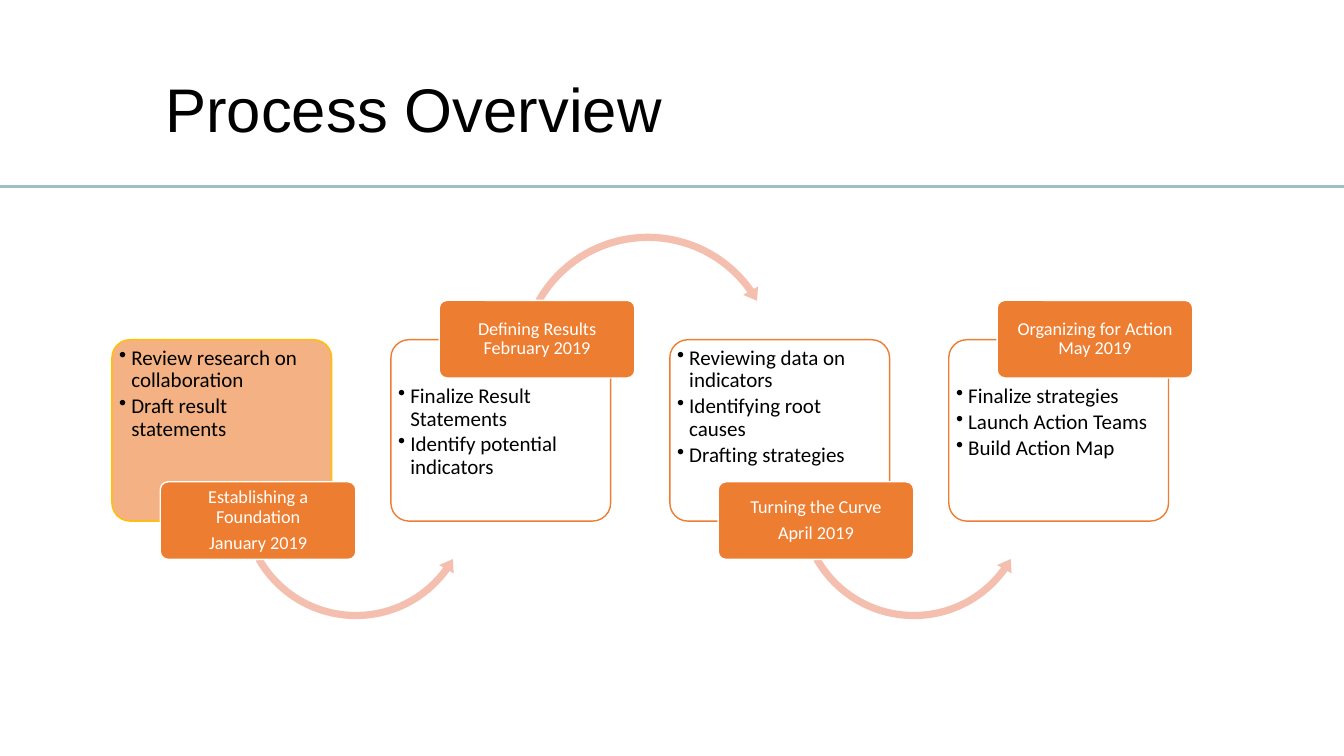
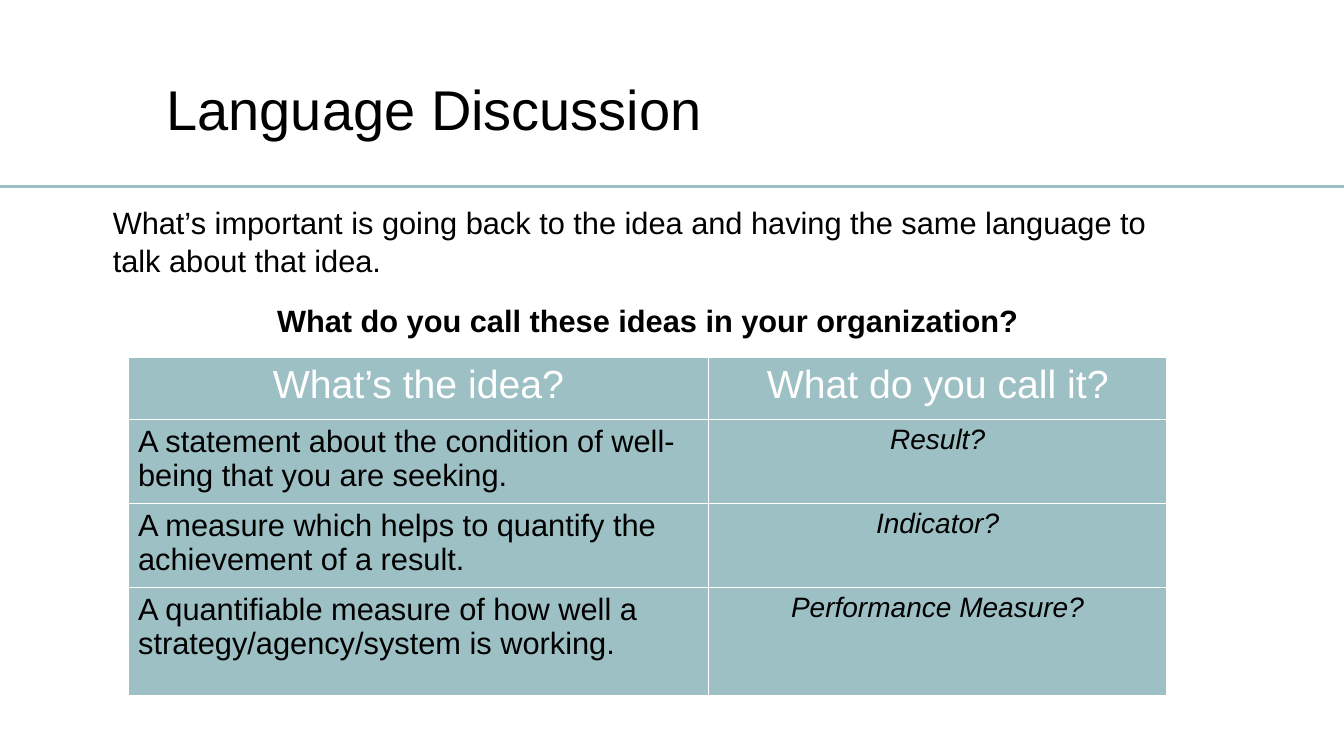
from copy import deepcopy
from pptx import Presentation
from pptx import util as u
from pptx.dml.color import RGBColor
from pptx.enum import shapes, text
from pptx.oxml import parse_xml
from pptx.oxml.ns import nsdecls, qn

HEX = dict(teal="9DC0C4", orange="ED7D31", peach="F4B183", gold="FFC000",
           pink="F4BFAE", white="FFFFFF", black="000000")
KIND = shapes.MSO_SHAPE
ALIGN = text.PP_ALIGN
ANCHOR = text.MSO_ANCHOR
WIDE, HIGH = 13.33, 7.5

# Content: bullets, label lines
STEPS = [
    (["Review research on collaboration", "Draft result statements"],
     ["Establishing a Foundation", "January 2019"]),
    (["Finalize Result Statements", "Identify potential indicators"],
     ["Defining Results\vFebruary 2019"]),
    (["Reviewing data on indicators", "Identifying root causes",
      "Drafting strategies"],
     ["Turning the Curve", "April 2019"]),
    (["Finalize strategies", "Launch Action Teams", "Build Action Map"],
     ["Organizing for Action May 2019"]),
]
INTRO = ["What’s important is going back to the idea and having the same "
         "language to talk about that idea.",
         "What do you call these ideas in your organization?"]
IDEAS = [
    ("What’s the idea?", "What do you call it?"),
    ("A statement about the condition of well-being that you are seeking.",
     "Result?"),
    ("A measure which helps to quantify the achievement of a result.",
     "Indicator?"),
    ("A quantifiable measure of how well a strategy/agency/system is working.",
     "Performance Measure?"),
]
COLS, ROWS = (5.76, 4.54), (0.61, 0.83, 0.83, 1.07)

# Arrow: kind, offset from card, top, size, adjustments
LOW = (KIND.LEFT_CIRCULAR_ARROW, 1.23, 3.81, 2.38,
       (0.03, 3.732, 21.487, 90.245, 0.035))
TOP = (KIND.CIRCULAR_ARROW, 1.22, 2.27, 2.66,
       (0.027, 3.316, 194.929, 125.755, 0.032))


def rgb(name):
    return RGBColor.from_string(HEX[name])


def inch(*nums):
    return [u.Inches(n) for n in nums]


def write(frame, lines, size, color="black", face="Arial", align=ALIGN.LEFT,
          lead=1.0, gap=0, bullet=False):
    frame.word_wrap = True
    frame.text = "\n".join(lines)
    for i, par in enumerate(frame.paragraphs):
        par.alignment, par.line_spacing = align, lead
        if i:
            par.space_before = u.Pt(gap)
        if bullet:
            props = par._p.get_or_add_pPr()
            props.set("marL", str(u.Inches(0.12)))
            props.set("indent", str(-u.Inches(0.12)))
            props.append(parse_xml(f'<a:buChar {nsdecls("a")} char="•"/>'))
        for run in par.runs:
            run.font.size, run.font.name = u.Pt(size), face
            run.font.color.rgb = rgb(color)
        for br in par._p.findall(qn("a:br")):
            br.append(deepcopy(par.runs[0]._r.rPr))


def inset(frame, side, top):
    frame.margin_left = frame.margin_right = u.Inches(side)
    frame.margin_top, frame.margin_bottom = u.Inches(top), u.Inches(side)


def draw(slide, kind, box, fill, line=None, adj=()):
    shape = slide.shapes.add_shape(kind, *inch(*box))
    shape.shadow.inherit = False
    shape.fill.solid()
    shape.fill.fore_color.rgb = rgb(fill)
    if line:
        shape.line.color.rgb, shape.line.width = rgb(line), u.Pt(1)
    else:
        shape.line.fill.background()
    for i, val in enumerate(adj):
        shape.adjustments[i] = val
    return shape


def add_rule(slide):
    """Draw the title rule and move it to the shared layout."""
    rule = slide.shapes.add_connector(shapes.MSO_CONNECTOR.STRAIGHT,
                                      *inch(0, 1.85, WIDE, 1.85))
    rule.line.color.rgb, rule.line.width = rgb("teal"), u.Pt(2)
    rule._element.spPr.append(parse_xml(f'<a:effectLst {nsdecls("a")}/>'))
    slide.slide_layout.shapes._spTree.append(rule._element)


def add_slide(deck, title, size, box, lead):
    slide = deck.slides.add_slide(deck.slide_layouts[5])
    head = slide.shapes.title
    head.left, head.top, head.width, head.height = inch(*box)
    head.text_frame.auto_size = text.MSO_AUTO_SIZE.NONE
    head.text_frame.vertical_anchor = ANCHOR.MIDDLE
    write(head.text_frame, [title], size, lead=lead)
    return slide


def add_steps(slide):
    left, step = 1.11, 8.3 / 3
    for i, (items, label) in enumerate(STEPS):
        x, high = left + i * step, i % 2 == 1
        # Card
        fill, edge = ("white", "orange") if i else ("peach", "gold")
        card = draw(slide, KIND.ROUNDED_RECTANGLE, (x, 3.37, 2.18, 1.8),
                    fill, edge, [0.1])
        frame = card.text_frame
        inset(frame, 0.02, 0.4 if high else 0.02)
        frame.vertical_anchor = ANCHOR.TOP
        write(frame, items, 15, face="Calibri", lead=0.9, gap=2.25,
              bullet=True)
        # Arrow to the next card
        if i < len(STEPS) - 1:
            kind, dx, y, size, adj = TOP if high else LOW
            draw(slide, kind, (x + dx, y, size, size), "pink", adj=adj)
        # Label
        tag = draw(slide, KIND.ROUNDED_RECTANGLE,
                   (x + 0.48, 2.98 if high else 4.78, 1.94, 0.77),
                   "orange", "white", [0.1])
        inset(tag.text_frame, 0.02, 0.02)
        tag.text_frame.vertical_anchor = ANCHOR.MIDDLE
        write(tag.text_frame, label, 13, "white", "Calibri", ALIGN.CENTER,
              0.9, 4.5)


def add_edges(cell):
    props = cell._tc.get_or_add_tcPr()
    for i, side in enumerate(("lnL", "lnR", "lnT", "lnB")):
        props.insert(i, parse_xml(
            f'<a:{side} {nsdecls("a")} w="12700"><a:solidFill>'
            f'<a:srgbClr val="{HEX["white"]}"/></a:solidFill></a:{side}>'))


def add_ideas(slide):
    # Introduction
    frame = slide.shapes.add_textbox(*inch(1.02, 1.95, 10.81, 1.41)).text_frame
    write(frame, INTRO, 22, lead=1.05, gap=14.5)
    ask = frame.paragraphs[1]
    ask.alignment, ask.runs[0].font.bold = ALIGN.CENTER, True
    # Table
    grid = slide.shapes.add_table(
        len(ROWS), len(COLS), *inch(1.27, 3.55, sum(COLS), sum(ROWS))).table
    for col, wide in zip(grid.columns, COLS):
        col.width = u.Inches(wide)
    for r, (row, tall) in enumerate(zip(IDEAS, ROWS)):
        grid.rows[r].height = u.Inches(tall)
        for c, words in enumerate(row):
            cell = grid.cell(r, c)
            cell.fill.solid()
            cell.fill.fore_color.rgb = rgb("teal")
            add_edges(cell)
            size = 28 if r == 0 else (22, 20)[c]
            write(cell.text_frame, [words], size,
                  "black" if r else "white",
                  align=ALIGN.LEFT if r and not c else ALIGN.CENTER)
            font = cell.text_frame.paragraphs[0].runs[0].font
            font.bold, font.italic = False, bool(r and c)


def main():
    deck = Presentation()
    deck.slide_width, deck.slide_height = inch(WIDE, HIGH)
    first = add_slide(deck, "Process Overview", 44,
                      (1.54, 0.4, 10.88, 1.44), 0.9)
    add_rule(first)
    add_steps(first)
    add_ideas(add_slide(deck, "Language Discussion", 40,
                        (1.55, 0.69, 8.08, 0.77), 1.0))
    deck.save("out.pptx")


if __name__ == "__main__":
    main()
